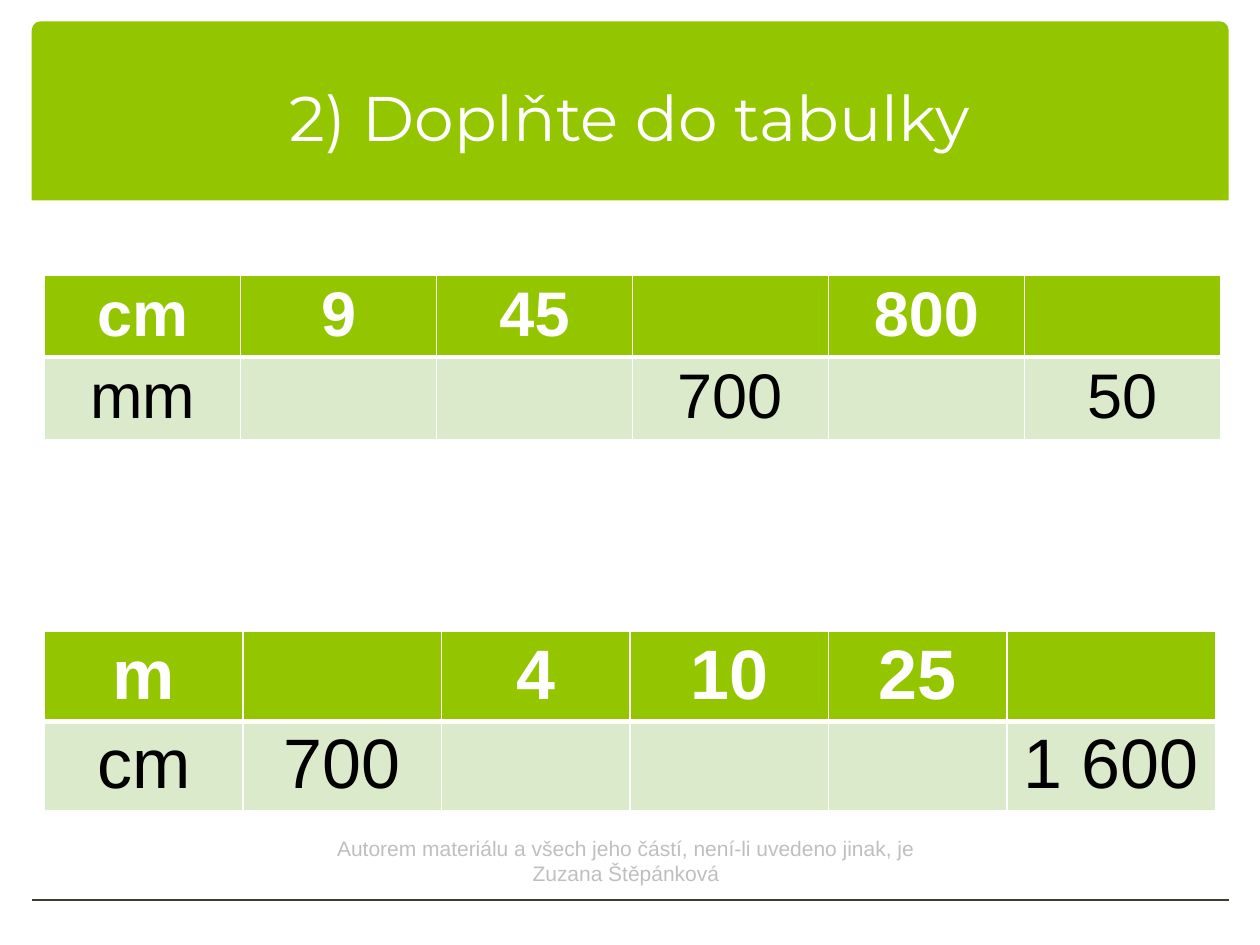
import pptx
import pptx.util
import pptx.dml.color
import pptx.enum.shapes
import pptx.enum.text
import pptx.oxml.ns
import lxml.etree

Cm = pptx.util.Cm
Pt = pptx.util.Pt
MID = pptx.enum.text.MSO_ANCHOR.MIDDLE
GREEN, PALE, WHITE = "94C600", "DCEACC", "FFFFFF"
BLACK, GREY, DARK = "000000", "BFBFBF", "3E3D2D"


def color(code):
    return pptx.dml.color.RGBColor.from_string(code)


def paint(shape, code):
    shape.fill.solid()
    shape.fill.fore_color.rgb = color(code)


def write(frame, text, size, code, face="Arial", bold=False):
    frame.text = text
    par = frame.paragraphs[0]
    par.alignment = pptx.enum.text.PP_ALIGN.CENTER
    for run in par.runs:
        font = run.font
        font.name, font.size, font.bold = face, Pt(size), bold
        font.color.rgb = color(code)


def add_band(slide):
    kind = pptx.enum.shapes.MSO_SHAPE.ROUND_2_SAME_RECTANGLE
    band = slide.shapes.add_shape(kind, Cm(0.64), Cm(0.43), Cm(24.13), Cm(3.61))
    band.adjustments[0] = 0.05
    band.shadow.inherit = False
    paint(band, GREEN)
    band.line.fill.background()


def add_rule(slide):
    kind = pptx.enum.shapes.MSO_CONNECTOR.STRAIGHT
    rule = slide.shapes.add_connector(kind, Cm(0.64), Cm(18.14), Cm(24.77), Cm(18.14))
    rule.line.color.rgb = color(DARK)
    rule.line.width = Pt(1)
    props = rule.element.spPr
    lxml.etree.SubElement(props, pptx.oxml.ns.qn("a:effectLst"))


def set_title(slide, text):
    title = slide.shapes.title
    title.left, title.top = Cm(0.84), Cm(0.76)
    title.width, title.height = Cm(23.7), Cm(3.18)
    title.text_frame.vertical_anchor = MID
    write(title.text_frame, text, 36, WHITE, "Montserrat")
    # Bring the title in front of the band.
    title.element.getparent().append(title.element)


def edge(cell, head):
    """Give a cell white borders, thick between head and body."""
    props = cell._tc.get_or_add_tcPr()
    qn = pptx.oxml.ns.qn
    thick = "B" if head else "T"
    for spot, side in enumerate("LRTB"):
        width = Pt(3 if side == thick else 1)
        line = lxml.etree.Element(qn("a:ln" + side), w=str(width))
        fill = lxml.etree.SubElement(line, qn("a:solidFill"))
        lxml.etree.SubElement(fill, qn("a:srgbClr"), val=WHITE)
        props.insert(spot, line)


def add_grid(slide, top, widths, high, size, rows):
    frame = slide.shapes.add_table(
        len(rows), len(widths), Cm(0.9), Cm(top), Cm(sum(widths)), Cm(high * len(rows)))
    grid = frame.table
    for col, width in zip(grid.columns, widths):
        col.width = Cm(width)
    for r, texts in enumerate(rows):
        grid.rows[r].height = Cm(high)
        head = r == 0
        for c, text in enumerate(texts):
            cell = grid.cell(r, c)
            cell.margin_top = cell.margin_bottom = Cm(0.09)
            paint(cell, GREEN if head else PALE)
            edge(cell, head)
            if text:
                write(cell.text_frame, text, size, WHITE if head else BLACK, bold=head)


def add_note(slide, text):
    box = slide.shapes.add_textbox(Cm(6.27), Cm(16.71), Cm(12.7), Cm(1.27))
    box.text_frame.word_wrap = True
    write(box.text_frame, text, 12, GREY)


def main():
    deck = pptx.Presentation()
    deck.slide_width, deck.slide_height = Cm(25.4), Cm(19.05)
    slide = deck.slides.add_slide(deck.slide_layouts[5])
    add_band(slide)
    add_rule(slide)
    set_title(slide, "2) Doplňte do tabulky")
    add_grid(slide, 5.54, [3.95] * 6, 1.66, 36, [
        ["cm", "9", "45", "", "800", ""],
        ["mm", "", "", "700", "", "50"]])
    add_grid(slide, 12.73, [4, 4, 3.8, 4, 3.6, 4.2], 1.81, 40, [
        ["m", "", "4", "10", "25", ""],
        ["cm", "700", "", "", "", "1 600"]])
    add_note(slide, "Autorem materiálu a všech jeho částí, není-li uvedeno jinak, je "
                    "Zuzana Štěpánková")
    deck.save("out.pptx")


if __name__ == "__main__":
    main()
